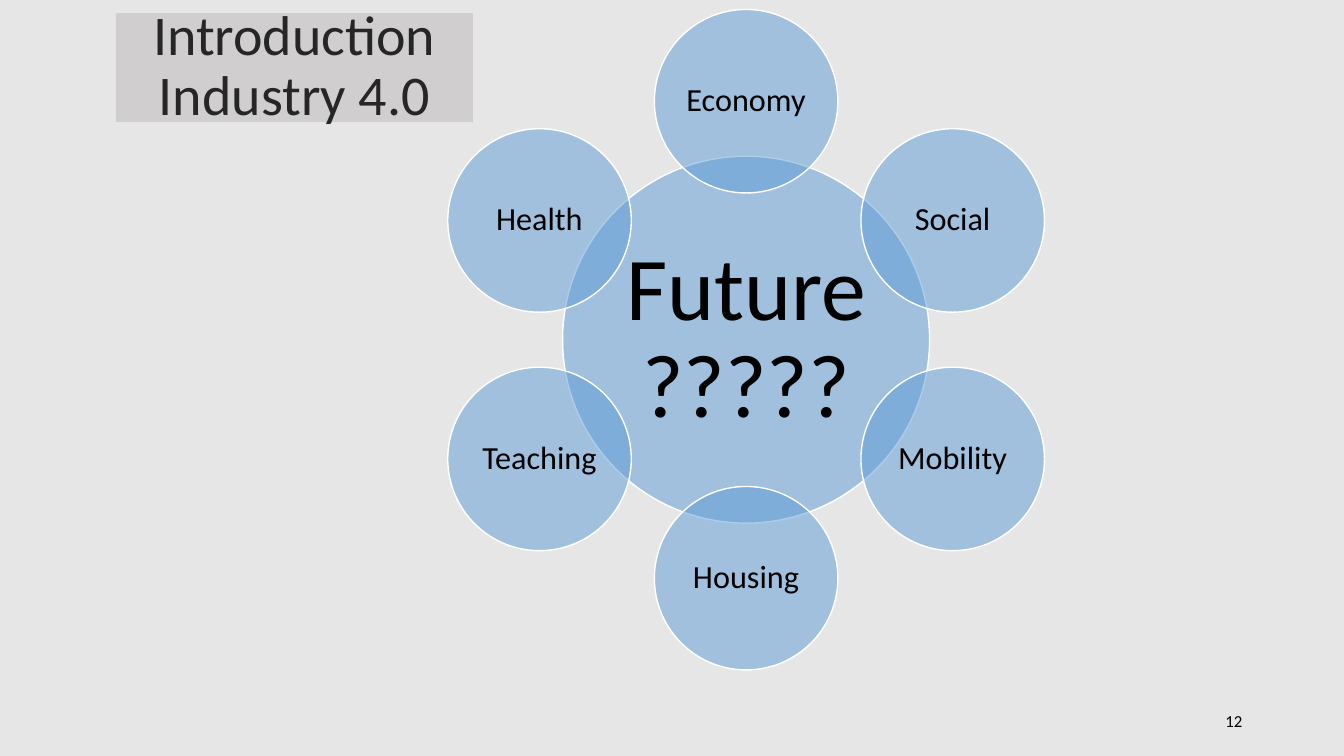
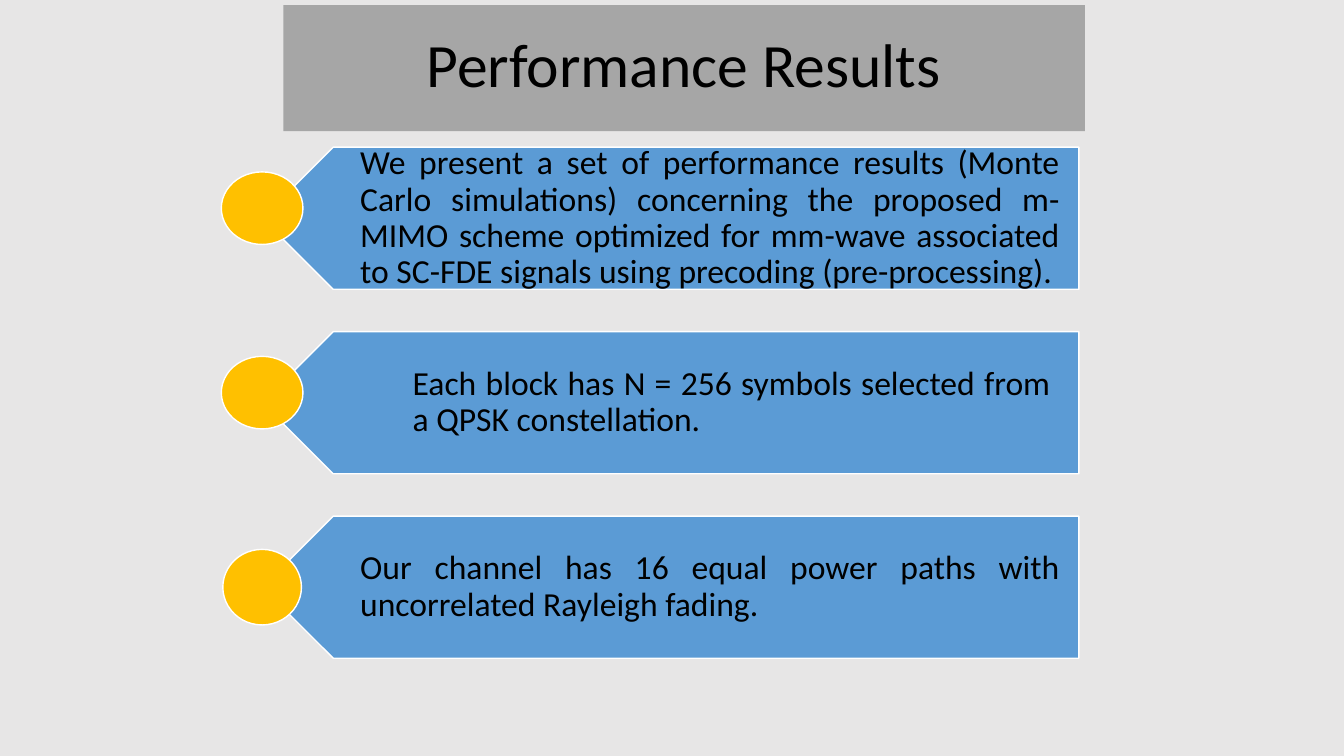
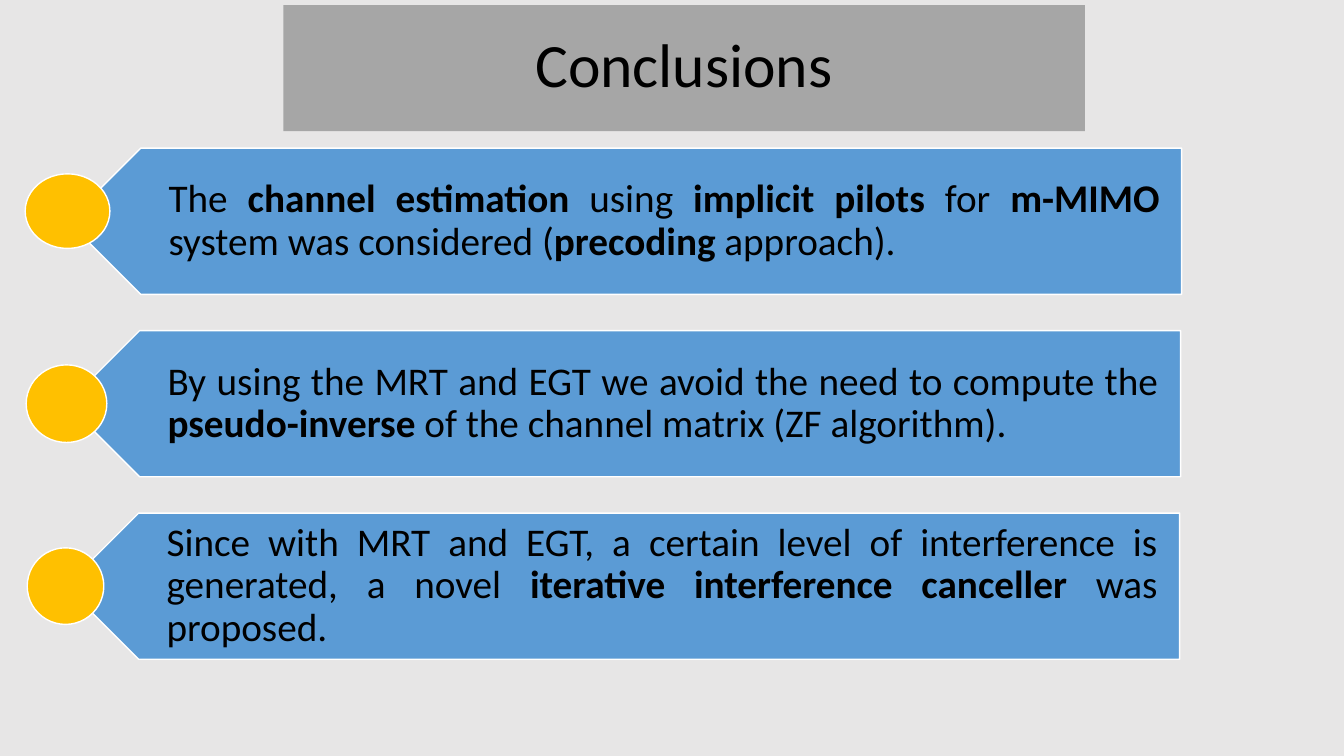
from math import cos, radians, sin

from lxml.etree import SubElement
from pptx import Presentation
from pptx.dml.color import RGBColor
from pptx.enum.shapes import MSO_SHAPE
from pptx.enum.text import MSO_ANCHOR, MSO_AUTO_SIZE, PP_ALIGN
from pptx.oxml.ns import qn
from pptx.util import Inches, Pt

FONT = "Calibri"
PAPER = RGBColor(0xE7, 0xE6, 0xE6)
BLUE = RGBColor(0x5B, 0x9B, 0xD5)
GOLD = RGBColor(0xFF, 0xC0, 0x00)
GREY = RGBColor(0xA6, 0xA6, 0xA6)
SILVER = RGBColor(0xD0, 0xCE, 0xCE)
WHITE = RGBColor(0xFF, 0xFF, 0xFF)
BLACK = RGBColor(0x00, 0x00, 0x00)
DARK = RGBColor(0x26, 0x26, 0x26)

HEAD = (2.81, 0.05, 7.95, 1.25)  # title band of the list slides


def write(shape, text, size, color=BLACK, align=PP_ALIGN.CENTER,
          pads=(0.1, 0.05, 0.1, 0.05), space=0.9):
    """Fill a shape with one paragraph; *stars* enclose bold words."""
    frame = shape.text_frame
    frame.word_wrap = True
    frame.auto_size = MSO_AUTO_SIZE.NONE
    frame.vertical_anchor = MSO_ANCHOR.MIDDLE
    (frame.margin_left, frame.margin_top,
     frame.margin_right, frame.margin_bottom) = map(Inches, pads)
    para = frame.paragraphs[0]
    para.alignment = align
    para.line_spacing = space
    for i, part in enumerate(text.split("*")):
        run = para.add_run()
        run.text = part
        font = run.font
        font.name, font.size, font.bold = FONT, Pt(size), i % 2 == 1
        font.color.rgb = color


def draw(slide, kind, box, fill, alpha=None):
    """Add a white-edged shape, see-through if alpha (percent) is given."""
    shape = slide.shapes.add_shape(kind, *map(Inches, box))
    shape.shadow.inherit = False
    shape.fill.solid()
    shape.fill.fore_color.rgb = fill
    shape.line.color.rgb = WHITE
    shape.line.width = Pt(1)
    if alpha is not None:
        color = next(shape.fill._xPr.iter(qn("a:srgbClr")))
        SubElement(color, qn("a:alpha"), val=str(alpha * 1000))
    return shape


def label(slide, box, text, size, **style):
    write(slide.shapes.add_textbox(*map(Inches, box)), text, size, **style)


def start(prs, text, box=HEAD, fill=GREY, size=44, color=BLACK):
    """Add a title-only slide with its title on a filled band."""
    slide = prs.slides.add_slide(prs.slide_layouts[5])
    title = slide.shapes.title
    title.left, title.top, title.width, title.height = map(Inches, box)
    title.fill.solid()
    title.fill.fore_color.rgb = fill
    write(title, text, size, color)
    return slide


def disc(slide, x, y, size, text, points, pad):
    """Draw a translucent circle around the centre x, y."""
    box = (x - size / 2, y - size / 2, size, size)
    shape = draw(slide, MSO_SHAPE.OVAL, box, BLUE, alpha=50)
    write(shape, text, points, pads=(pad,) * 4)


def wheel(slide, x, y, size, hub, names):
    """Draw a hub with half-size circles spread evenly around it."""
    disc(slide, x, y, size, hub, 64, 0.09)
    reach = size * 0.65
    for i, name in enumerate(names):
        turn = radians(i * 360 / len(names))
        disc(slide, x + reach * sin(turn), y - reach * cos(turn),
             size / 2, name, 23, 0.03)


def bands(slide, box, step, shift, size, rows):
    """Stack arrow bands, each with a dot centred on its tip.

    A row holds text, text pads, dot width, dot height and dot rise."""
    left, top, width, height = box
    for i, (text, pads, wide, high, rise) in enumerate(rows):
        x, y = left - i * shift, top + i * step
        band = draw(slide, MSO_SHAPE.PENTAGON, (x, y, width, height), BLUE)
        band.rotation = 180
        inset = height / 4  # half the depth of the tip
        label(slide, (x + inset, y, width - inset, height), text, size,
              align=PP_ALIGN.JUSTIFY, pads=pads)
        draw(slide, MSO_SHAPE.OVAL,
             (x - wide / 2, y + (height - high) / 2 - rise, wide, high), GOLD)


def intro(prs):
    slide = start(prs, "Introduction Industry 4.0", (1.15, 0.13, 3.54, 1.08),
                  SILVER, 40, DARK)
    label(slide, (9.42, 6.95, 3, 0.4), "12", 12, align=PP_ALIGN.RIGHT, space=1)
    wheel(slide, 7.4, 3.37, 3.64, "Future ?????",
          ["Economy", "Social", "Mobility", "Housing", "Teaching", "Health"])


def results(prs):
    slide = start(prs, "Performance Results")
    near, far = (0.62, 0.1, 0.19, 0.1), (1.14, 0.15, 0.28, 0.15)
    bands(slide, (2.6, 1.46, 8.1, 1.41), 1.83, 0, 24, [
        ("We present a set of performance results (Monte Carlo simulations) "
         "concerning the proposed m-MIMO scheme optimized for mm-wave "
         "associated to SC-FDE signals using precoding (pre-processing).",
         near, 0.81, 0.72, 0.1),
        ("Each block has N = 256 symbols selected from a QPSK constellation.",
         far, 0.81, 0.72, 0.1),
        ("Our channel has 16 equal power paths with uncorrelated Rayleigh "
         "fading.", near, 0.78, 0.75, 0),
    ])


def closing(prs):
    slide = start(prs, "Conclusions")
    pads = (0.64, 0.12, 0.22, 0.12)
    bands(slide, (0.67, 1.47, 11.05, 1.45), 1.81, 0.01, 28, [
        ("The *channel estimation *using *implicit pilots *for *m-MIMO* "
         "system was considered (*precoding* approach).",
         pads, 0.84, 0.74, 0.1),
        ("By using the MRT and EGT we avoid the need to compute the "
         "*pseudo-inverse* of the channel matrix (ZF algorithm).",
         pads, 0.8, 0.77, 0),
        ("Since with MRT and EGT, a certain level of interference is "
         "generated, a novel *iterative interference canceller *was "
         "proposed.", pads, 0.76, 0.76, 0),
    ])


def main():
    prs = Presentation()
    prs.slide_width, prs.slide_height = Inches(13.33), Inches(7.5)
    # Shared background
    paper = prs.slide_master.background.fill
    paper.solid()
    paper.fore_color.rgb = PAPER
    for build in (intro, results, closing):
        build(prs)
    prs.save("out.pptx")


if __name__ == "__main__":
    main()
